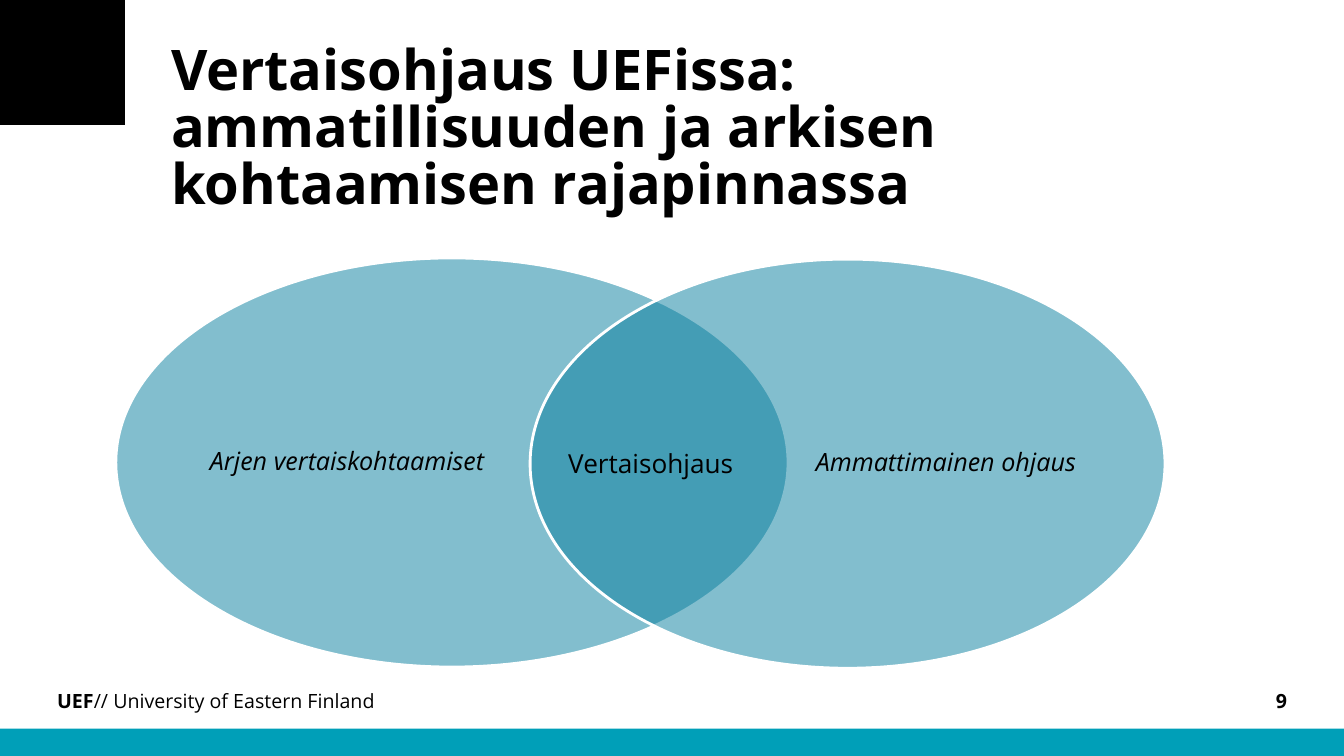
"""Build the slide on peer guidance between everyday and professional encounters."""
from dataclasses import dataclass

from lxml.etree import SubElement
from pptx import Presentation
from pptx.dml.color import RGBColor
from pptx.enum.shapes import MSO_SHAPE as Preset
from pptx.enum.text import MSO_ANCHOR as Anchor, MSO_AUTO_SIZE as AutoSize, PP_ALIGN as Align
from pptx.oxml.ns import qn
from pptx.util import Cm, Pt


@dataclass(frozen=True)
class Theme:
    font: str = "Open Sans"
    ink: RGBColor = RGBColor(0, 0, 0)
    paper: RGBColor = RGBColor(255, 255, 255)
    band: RGBColor = RGBColor(0x00, 0x9F, 0xB8)
    circle: RGBColor = RGBColor(0x07, 0x7E, 0x9E)
    circle_opacity: int = 50
    title_size: float = 40
    title_leading: float = 40.8
    circle_size: float = 18
    overlap_size: float = 18.7
    footer_size: float = 14


THEME = Theme()
WIDTH, HEIGHT = 33.87, 19.05
BAND_HEIGHT = 0.69
CORNER = 3.15
FOOTER_TOP, FOOTER_HEIGHT = 17.27, 0.79


def place(shape, left, top, width, height):
    shape.left, shape.top = Cm(left), Cm(top)
    shape.width, shape.height = Cm(width), Cm(height)


def write(frame, parts, size, align=Align.LEFT, anchor=Anchor.TOP, bold=False,
          italic=False, leading=None, margins=(0.25, 0.13)):
    """Parts are (text, bold, tracking) tuples, or one plain string."""
    frame.word_wrap = True
    frame.auto_size = AutoSize.NONE
    frame.vertical_anchor = anchor
    frame.margin_left = frame.margin_right = Cm(margins[0])
    frame.margin_top = frame.margin_bottom = Cm(margins[1])
    paragraph = frame.paragraphs[0]
    paragraph.alignment = align
    if leading:
        paragraph.line_spacing = leading
    for text, heavy, tracking in [(parts, bold, 0)] if isinstance(parts, str) else parts:
        run = paragraph.add_run()
        run.text = text
        font = run.font
        font.name, font.size = THEME.font, Pt(size)
        font.bold, font.italic = heavy, italic
        font.color.rgb = THEME.ink
        if tracking:
            font._element.set("spc", str(int(tracking * 100)))


def add_text(slide, box, parts, size, **style):
    label = slide.shapes.add_textbox(*map(Cm, box))
    write(label.text_frame, parts, size, **style)


def add_filled(slide, preset, box, color):
    shape = slide.shapes.add_shape(preset, *map(Cm, box))
    shape.shadow.inherit = False
    shape.fill.solid()
    shape.fill.fore_color.rgb = color
    shape.line.fill.background()
    return shape


def add_circle(slide, box, text, align):
    """Draw one translucent circle with its label on the outer side."""
    left, top, width, height = box
    circle = add_filled(slide, Preset.OVAL, box, THEME.circle)
    color = circle._element.spPr.find(qn("a:solidFill"))[0]
    SubElement(color, qn("a:alpha"), val=str(THEME.circle_opacity * 1000))
    circle.line.color.rgb = THEME.paper
    circle.line.width = Pt(2)
    start = 0.14 if align == Align.LEFT else 0.284
    area = (left + start * width, top + 0.118 * height, 0.576 * width, 0.764 * height)
    add_text(slide, area, text, THEME.circle_size, align=align, anchor=Anchor.MIDDLE,
             italic=True, leading=0.9, margins=(0, 0))


def add_title(slide, text):
    title = slide.shapes.title
    place(title, 4.06, 0.99, 28.27, 2.79)
    write(title.text_frame, text, THEME.title_size, bold=True,
          leading=Pt(THEME.title_leading))


def add_frame(slide):
    """Add the band, the corner square and the footer."""
    add_filled(slide, Preset.RECTANGLE, (0, HEIGHT - BAND_HEIGHT, WIDTH, BAND_HEIGHT), THEME.band)
    add_filled(slide, Preset.RECTANGLE, (0, 0, CORNER, CORNER), THEME.ink)
    sender = [("UEF", True, 0), ("/", False, -1.5), ("/ University of Eastern Finland", False, 0)]
    add_text(slide, (1.19, FOOTER_TOP, 13.06, FOOTER_HEIGHT), sender,
             THEME.footer_size, anchor=Anchor.MIDDLE)
    add_text(slide, (30.96, FOOTER_TOP, 1.73, FOOTER_HEIGHT), "9", THEME.footer_size,
             align=Align.RIGHT, anchor=Anchor.MIDDLE, bold=True)


def main():
    deck = Presentation()
    deck.slide_width, deck.slide_height = Cm(WIDTH), Cm(HEIGHT)
    slide = deck.slides.add_slide(deck.slide_layouts.get_by_name("Title Only"))
    add_frame(slide)
    add_title(slide, "Vertaisohjaus UEFissa: ammatillisuuden ja arkisen kohtaamisen rajapinnassa")
    add_circle(slide, (2.92, 6.5, 16.94, 10.31), "Arjen vertaiskohtaamiset", Align.LEFT)
    add_circle(slide, (13.36, 6.53, 16, 10.31), "Ammattimainen ohjaus", Align.RIGHT)
    add_text(slide, (14.07, 11.15, 5.74, 1.07), "Vertaisohjaus", THEME.overlap_size)
    deck.save("out.pptx")


if __name__ == "__main__":
    main()
